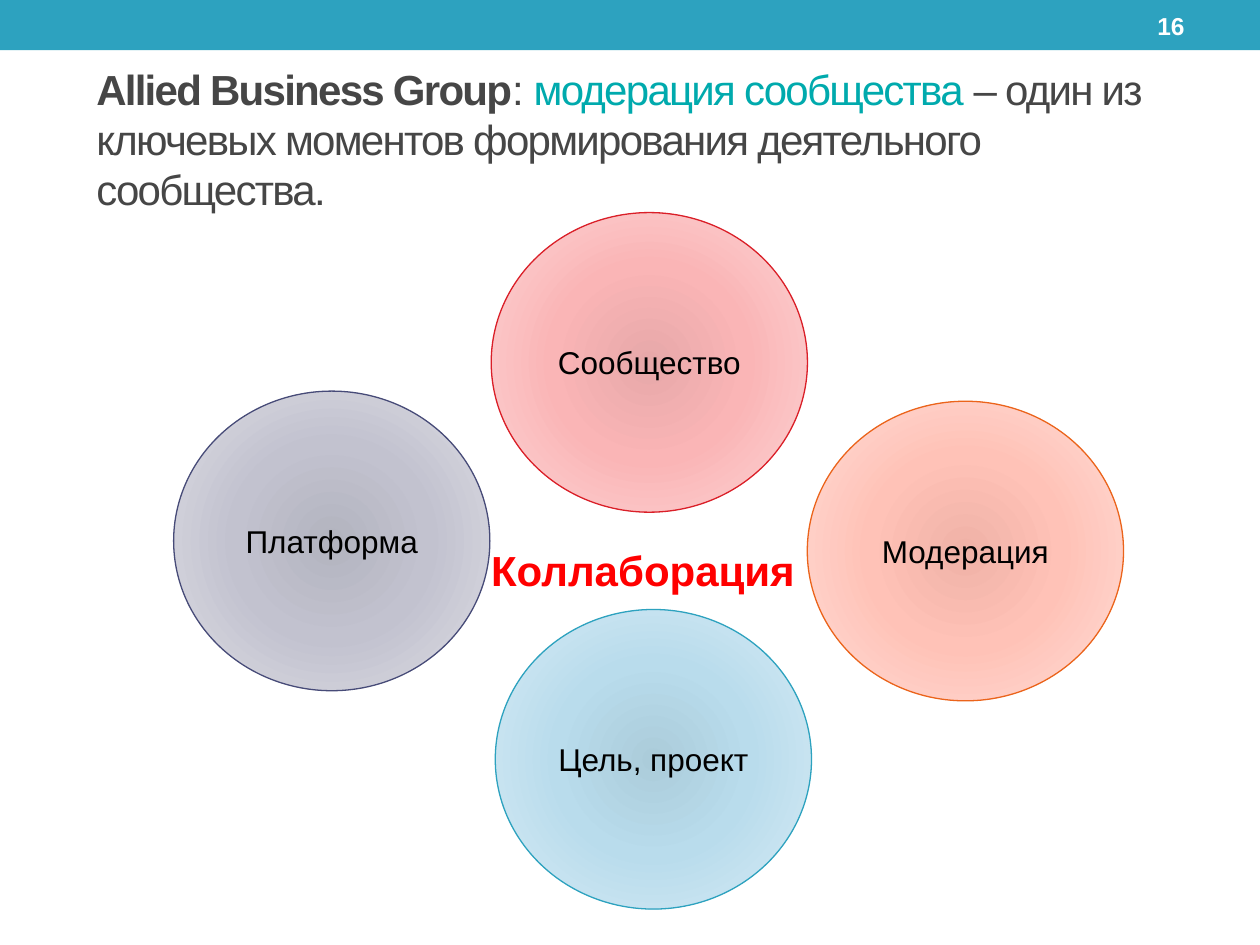
"""Build a slide of four circles around the idea of collaboration."""
import pptx
import pptx.dml.color
import pptx.enum.shapes
import pptx.enum.text
import pptx.oxml
import pptx.util

Pt = pptx.util.Pt
Shapes = pptx.enum.shapes.MSO_SHAPE
Align = pptx.enum.text.PP_ALIGN
Anchor = pptx.enum.text.MSO_ANCHOR


def color(value):
    return pptx.dml.color.RGBColor.from_string(value)


def add_text(para, text, size=18, ink="000000", bold=False, tracking=0):
    span = para.add_run()
    span.text = text
    span.font.name = "Arial"
    span.font.size = Pt(size)
    span.font.bold = bold
    span.font.color.rgb = color(ink)
    if tracking:
        span.font._element.set("spc", str(tracking * 100))


def radial_fill(shape, stops):
    marks = "".join(
        f'<a:gs pos="{place * 1000}"><a:srgbClr val="{tint}"/></a:gs>'
        for place, tint in zip((0, 45, 100), stops)
    )
    fill = pptx.oxml.parse_xml(
        '<a:gradFill xmlns:a="http://schemas.openxmlformats.org/drawingml/2006/main" rotWithShape="1">'
        f'<a:gsLst>{marks}</a:gsLst><a:path path="circle">'
        '<a:fillToRect l="100000" t="100000" r="100000" b="100000"/></a:path></a:gradFill>'
    )
    shape._element.spPr.find(pptx.oxml.ns.qn("a:prstGeom")).addnext(fill)


class Painter:
    teal = "2DA2BF"
    gray = "464646"
    circle_size = (180.7, 171.2)

    def __init__(self, page):
        self.page = page

    def shape(self, kind, left, top, width, height):
        shape = self.page.shapes.add_shape(kind, Pt(left), Pt(top), Pt(width), Pt(height))
        shape.shadow.inherit = False
        return shape

    def band(self, width, height):
        band = self.shape(Shapes.RECTANGLE, 0, 0, width, height)
        band.fill.solid()
        band.fill.fore_color.rgb = color(self.teal)
        band.line.fill.background()

    def text(self, left, top, width, height, spans, align=Align.LEFT, anchor=Anchor.TOP):
        box = self.page.shapes.add_textbox(Pt(left), Pt(top), Pt(width), Pt(height))
        box.text_frame.word_wrap = True
        box.text_frame.vertical_anchor = anchor
        para = box.text_frame.paragraphs[0]
        para.alignment = align
        for text, style in spans:
            add_text(para, text, **style)

    def circle(self, left, top, label, edge, stops):
        circle = self.shape(Shapes.OVAL, left, top, *self.circle_size)
        radial_fill(circle, stops)
        circle.line.color.rgb = color(edge)
        circle.line.width = Pt(0.75)
        circle.text_frame.word_wrap = True
        circle.text_frame.vertical_anchor = Anchor.MIDDLE
        para = circle.text_frame.paragraphs[0]
        para.alignment = Align.CENTER
        add_text(para, label)


def main():
    deck = pptx.Presentation()
    deck.slide_width, deck.slide_height = Pt(720), Pt(540)
    painter = Painter(deck.slides.add_slide(deck.slide_layouts[6]))

    painter.band(720, 28.6)
    painter.text(600, 1.5, 84, 26, [("16", dict(size=14, ink="FFFFFF", bold=True))],
                 align=Align.RIGHT, anchor=Anchor.MIDDLE)
    painter.text(261, 307.5, 219.5, 36.5,
                 [("Коллаборация ", dict(size=24, ink="FF0000", bold=True))], align=Align.CENTER)

    title = dict(size=24, ink=painter.gray, tracking=-1)
    painter.text(48, 32.5, 648, 78, [
        ("Allied Business Group", dict(title, bold=True)),
        (": ", title),
        ("модерация сообщества ", dict(title, ink="00AAAD")),
        ("– один из ключевых моментов формирования деятельного сообщества.", title),
    ])

    circles = [
        (280.7, 121.5, "Сообщество", "DA1F28", ("E7A8A9", "FAB5B6", "FDD6D7")),
        (99.2, 223.5, "Платформа", "474B78", ("B3B4BF", "C2C2CF", "DEDEE5")),
        (283, 348.3, "Цель, проект", painter.teal, ("ABCCDA", "B9DCEC", "D8ECF5")),
        (461.3, 229.3, "Модерация", "EB641B", ("F0B2A7", "FFC2B7", "FFDED8")),
    ]
    for circle in circles:
        painter.circle(*circle)

    deck.save("out.pptx")


if __name__ == "__main__":
    main()
